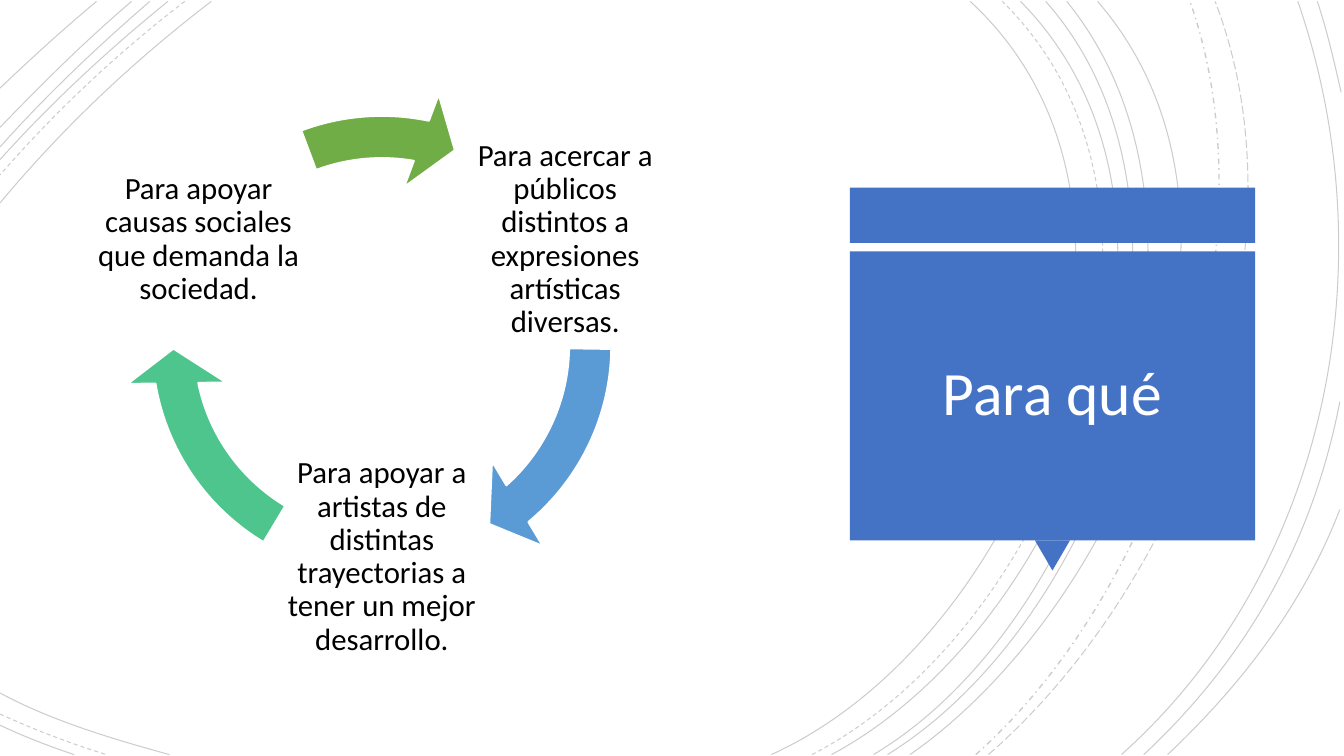
from collections import namedtuple
from dataclasses import dataclass
from math import cos, radians, sin

from pptx import Presentation
from pptx import util as u
from pptx.dml.color import RGBColor
from pptx.enum import dml, shapes, text
from pptx.oxml.ns import qn
from pptx.oxml.xmlchemy import OxmlElement

Box = namedtuple("Box", "left top width height")


@dataclass(frozen=True)
class Theme:
    font: str = "Calibri"
    title_size: int = 44
    step_size: int = 22
    line_spacing: float = 0.9
    curve_alpha: int = 20
    ink: RGBColor = RGBColor(0x00, 0x00, 0x00)
    paper: RGBColor = RGBColor(0xFF, 0xFF, 0xFF)
    panel: RGBColor = RGBColor(0x44, 0x72, 0xC4)
    blue: RGBColor = RGBColor(0x5B, 0x9B, 0xD5)
    teal: RGBColor = RGBColor(0x4D, 0xC5, 0x8D)
    green: RGBColor = RGBColor(0x70, 0xAD, 0x47)


THEME = Theme()
DASH = dml.MSO_LINE.DASH
DASH_DOT = dml.MSO_LINE.DASH_DOT
LONG_DASH = dml.MSO_LINE.LONG_DASH

SWEEPS = [
    (551, 732, 457, 855, 150, 693, None),
    (580, 753, 450, 870, 153, 716, DASH),
    (594, 764, 448, 879, 153, 729, None),
    (624, 783, 444, 879, 150, 747, None),
    (634, 792, 441, 888, 156, 762, None),
    (650, 801, 434, 920, 158, 784, None),
    (697, 831, 420, 911, 174, 850, DASH_DOT),
    (706, 845, 418, 937, 181, 868, LONG_DASH),
    (801, 950, 406, 991, 186, 927, None),
]
TOP_LEFT = [
    (151, 96, 43, 45, 91, 145, None),
    (132, 85, 37, 40, 79, 125, DASH),
    (120, 78, 35, 37, 73, 114, None),
    (107, 70, 33, 33, 68, 105, None),
    (94, 60, 30, 30, 60, 91, None),
    (69, 45, 21, 22, 42, 63, None),
]
BOTTOM_LEFT = [
    (495, 37, 515, 81, 528, 121, None),
    (510, 24, 521, 50, 531, 76, DASH),
    (518, 17, 526, 35, 533, 53, None),
]
RIGHT_EDGE = [
    [(817, 539), (891, 470), (938, 386), (957, 287)],
    [(834, 539), (886, 490), (931, 432), (957, 364)],
    [(958, 66), (953, 44), (948, 22), (941, 1)],
]
STEPS = [
    ("Para acercar a públicos distintos a expresiones artísticas diversas.",
     THEME.blue, 29.637, 0.518),
    ("Para apoyar a artistas de distintas trayectorias a tener un mejor desarrollo.",
     THEME.teal, 101.72, 72.602),
    ("Para apoyar causas sociales que demanda la sociedad.",
     THEME.green, 168.565, 149.673),
]


def pts(*values):
    return [u.Pt(v) for v in values]


def add_solid(s, kind, box, color):
    sp = s.shapes.add_shape(kind, *pts(*box))
    sp.shadow.inherit = False
    sp.fill.solid()
    sp.fill.fore_color.rgb = color
    sp.line.fill.background()
    return sp


def format_text(tf, size, color):
    tf.word_wrap = True
    tf.auto_size = text.MSO_AUTO_SIZE.NONE
    tf.vertical_anchor = text.MSO_ANCHOR.MIDDLE
    p = tf.paragraphs[0]
    p.alignment = text.PP_ALIGN.CENTER
    p.line_spacing = THEME.line_spacing
    r = p.runs[0]
    r.font.name = THEME.font
    r.font.size = u.Pt(size)
    r.font.color.rgb = color


def add_curve(s, box, points, dash=None):
    start, *rest = [pts(box.left + x, box.top + y) for x, y in points]
    builder = s.shapes.build_freeform(*start)
    builder.add_line_segments(rest, close=False)
    sp = builder.convert_to_shape()
    sp.shadow.inherit = False
    sp.fill.background()
    sp.line.width = u.Pt(1 if dash == DASH_DOT else 0.75)
    sp.line.color.rgb = THEME.ink
    if dash is not None:
        sp.line.dash_style = dash
    alpha = OxmlElement("a:alpha")
    alpha.set("val", str(THEME.curve_alpha * 1000))
    sp.element.xpath(".//a:ln//a:srgbClr")[0].append(alpha)
    bezier = OxmlElement("a:cubicBezTo")
    for segment in sp.element.xpath(".//a:lnTo"):
        bezier.append(segment.find(qn("a:pt")))
        segment.getparent().remove(segment)
    sp.element.xpath(".//a:path")[0].append(bezier)


def draw_backdrop(s, box):
    top, bottom = 1, box.height - 1
    for x0, ax, ay, bx, by, x1, dash in SWEEPS:
        add_curve(s, box, [(x0, bottom), (ax, ay), (bx, by), (x1, top)], dash)
    for x0, ax, ay, bx, by, y1, dash in TOP_LEFT:
        add_curve(s, box, [(x0, top), (ax, ay), (bx, by), (0, y1)], dash)
    for y0, ax, ay, bx, by, x1, dash in BOTTOM_LEFT:
        add_curve(s, box, [(0, y0), (ax, ay), (bx, by), (x1, bottom)], dash)
    for points in RIGHT_EDGE:
        add_curve(s, box, points)


def draw_title_panel(s, box):
    band, gap, tip_width, tip_height, inset = 39.5, 6, 25, 21.5, 6.5
    body_top = box.top + band + gap
    body_height = box.height - band - gap - tip_height
    body = Box(box.left, body_top, box.width, body_height)
    tip = Box(box.left + (box.width - tip_width) / 2, body_top + body_height,
              tip_width, tip_height)
    kind = shapes.MSO_SHAPE
    add_solid(s, kind.RECTANGLE, Box(box.left, box.top, box.width, band), THEME.panel)
    add_solid(s, kind.ISOSCELES_TRIANGLE, tip, THEME.panel).rotation = 180
    add_solid(s, kind.RECTANGLE, body, THEME.panel)

    title = s.shapes.title
    title.left, title.top, title.width, title.height = pts(
        body.left + inset, body.top + inset,
        body.width - 2 * inset, body.height - 2 * inset)
    title.text_frame.text = "Para qué"
    format_text(title.text_frame, THEME.title_size, THEME.paper)
    title.element.getparent().append(title.element)


def draw_cycle(s, box):
    label, radius = 156, 151.2
    center_x = box.left + box.width / 2
    center_y = box.top + box.height / 2
    for i, (words, color, end, start) in enumerate(STEPS):
        angle = radians(-30 + i * 360 / len(STEPS))
        tb = s.shapes.add_textbox(*pts(
            center_x + radius * cos(angle) - label / 2,
            center_y + radius * sin(angle) - label / 2, label, label))
        tf = tb.text_frame
        tf.text = words
        tf.margin_left = tf.margin_right = tf.margin_top = tf.margin_bottom = u.Pt(2)
        format_text(tf, THEME.step_size, THEME.ink)

        arrow = add_solid(s, shapes.MSO_SHAPE.CIRCULAR_ARROW, box, color)
        arrow.line.color.rgb = THEME.paper
        arrow.line.width = u.Pt(1.5)
        for n, value in enumerate((0.082, 5.762, end, start, 0.096)):
            arrow.adjustments[n] = value


def main():
    prs = Presentation()
    page = Box(0, 0, 960, 540)
    prs.slide_width, prs.slide_height = pts(page.width, page.height)
    s = prs.slides.add_slide(prs.slide_layouts[5])
    s.background.fill.solid()
    s.background.fill.fore_color.rgb = THEME.paper
    draw_backdrop(s, page)
    draw_title_panel(s, Box(607, 134, 289.5, 273.5))
    draw_cycle(s, Box(88.5, 62.5, 368.5, 368.5))
    prs.save("out.pptx")


if __name__ == "__main__":
    main()
